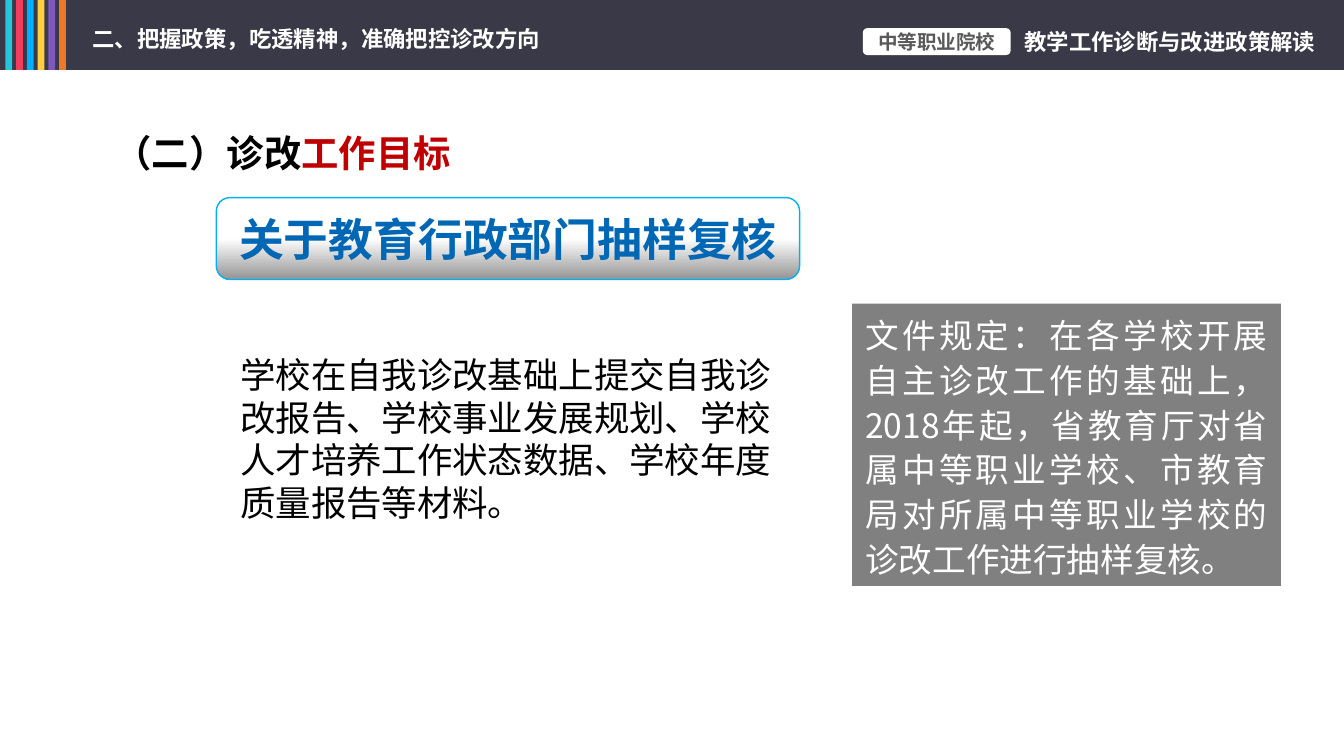
from dataclasses import dataclass

from lxml.etree import SubElement
from pptx import Presentation
from pptx.dml.color import RGBColor as RGB
from pptx.enum.shapes import MSO_SHAPE as Kind
from pptx.enum.text import MSO_ANCHOR as Anchor, MSO_AUTO_SIZE as Auto, PP_ALIGN as Align
from pptx.oxml.ns import qn
from pptx.util import Inches, Pt


@dataclass(frozen=True)
class Theme:
    font: str = "Noto Sans CJK SC"
    latin: str = "Calibri"
    white: str = "FFFFFF"
    black: str = "000000"
    bar: str = "3A3947"
    label: str = "595959"
    red: str = "C00000"
    blue: str = "0067B4"
    edge: str = "00B0F0"
    shade: str = "949494"
    panel: str = "808080"
    stripes: tuple = ("26C6DA", "F23E5C", "00B0FF", "FFCD40", "7E57C1", "EC7825")
    tag: float = 10.5
    head: float = 12
    title: float = 20
    banner: float = 24
    body: float = 19
    note: float = 18


theme = Theme()
deck = Presentation()
deck.slide_width = Inches(10)
deck.slide_height = Inches(10 * 9 / 16)
slide = deck.slides.add_slide(deck.slide_layouts[6])


def add_box(kind, place, fill=None):
    """Add a preset shape without line or shadow, or a text box if kind is None."""
    spot = [Inches(n) for n in place]
    if kind is None:
        return slide.shapes.add_textbox(*spot)
    box = slide.shapes.add_shape(kind, *spot)
    box.shadow.inherit = False
    box.line.fill.background()
    if fill:
        box.fill.solid()
        box.fill.fore_color.rgb = RGB.from_string(fill)
    return box


def write(box, runs, size, bold=False, align=Align.LEFT, font=theme.font, **frame):
    """Fill a box with one paragraph of (text, colour) runs; frame holds text frame settings."""
    for name, value in frame.items():
        setattr(box.text_frame, name, value)
    para = box.text_frame.paragraphs[0]
    para.alignment = align
    for text, color in runs:
        run = para.add_run()
        run.text = text
        look = {"size": Pt(size), "bold": bold, "name": font}
        for name, value in look.items():
            setattr(run.font, name, value)
        run.font.color.rgb = RGB.from_string(color)
        SubElement(run.font._element, qn("a:ea"), typeface=theme.font)
    return para


fit = {"auto_size": Auto.SHAPE_TO_FIT_TEXT}
line = {**fit, "word_wrap": False}
block = {**fit, "word_wrap": True}
middle = {"vertical_anchor": Anchor.MIDDLE}
tight = {"margin_top": 0, "margin_bottom": 0}

# Header bar with colour stripes
add_box(Kind.RECTANGLE, (-0.01, 0, 10.01, 0.52), theme.bar)
for i, color in enumerate(theme.stripes):
    add_box(Kind.RECTANGLE, (0.04 + 0.08 * i, -0.01, 0.05, 0.53), color)

head = add_box(None, (0.59, 0.14, 3.57, 0.3))
write(head, [("二、把握政策，吃透精神，准确把控诊改方向", theme.white)],
      theme.head, bold=True, **line, **middle)

tag = add_box(Kind.ROUNDED_RECTANGLE, (6.42, 0.21, 1.1, 0.2), theme.white)
write(tag, [("中等职业院校", theme.label)], theme.tag, bold=True, align=Align.CENTER,
      margin_left=Inches(0.04), margin_right=Inches(0.04), **tight, **middle)

topic = add_box(None, (7.61, 0.21, 2.19, 0.2))
write(topic, [("教学工作诊断与改进政策解读", theme.white)], theme.head, bold=True,
      align=Align.CENTER, margin_left=0, margin_right=0, **tight, **line, **middle)

# Title and banner
title = add_box(None, (0.74, 0.92, 2.73, 0.44))
write(title, [("（二）诊改", theme.black), ("工作目标", theme.red)],
      theme.title, bold=True, align=Align.CENTER, **line)

banner = add_box(Kind.ROUNDED_RECTANGLE, (1.61, 1.47, 4.34, 0.61))
banner.fill.gradient()
banner.fill.gradient_angle = 90
for stop, color, pos in zip(banner.fill.gradient_stops, (theme.shade, theme.white), (0, 0.5)):
    stop.color.rgb = RGB.from_string(color)
    stop.position = pos
banner.line.color.rgb = RGB.from_string(theme.edge)
banner.line.width = Pt(0.75)
write(banner, [("关于教育行政部门抽样复核", theme.blue)], theme.banner, bold=True,
      align=Align.CENTER, font=theme.latin, **middle)

# Body text and side panel
body = add_box(None, (1.69, 2.58, 4.33, 1.38))
write(body, [("学校在自我诊改基础上提交自我诊改报告、学校事业发展规划、"
              "学校人才培养工作状态数据、学校年度质量报告等材料。", theme.black)],
      theme.body, **block)

panel = add_box(Kind.RECTANGLE, (6.34, 2.26, 3.19, 2.1), theme.panel)
rule = write(panel, [("文件规定：在各学校开展自主诊改工作的基础上，2018年起，"
                      "省教育厅对省属中等职业学校、市教育局对所属中等职业学校的"
                      "诊改工作进行抽样复核。", theme.white)],
             theme.note, align=Align.JUSTIFY, vertical_anchor=Anchor.TOP, **block)
rule.line_spacing = Pt(24)

deck.save("out.pptx")
